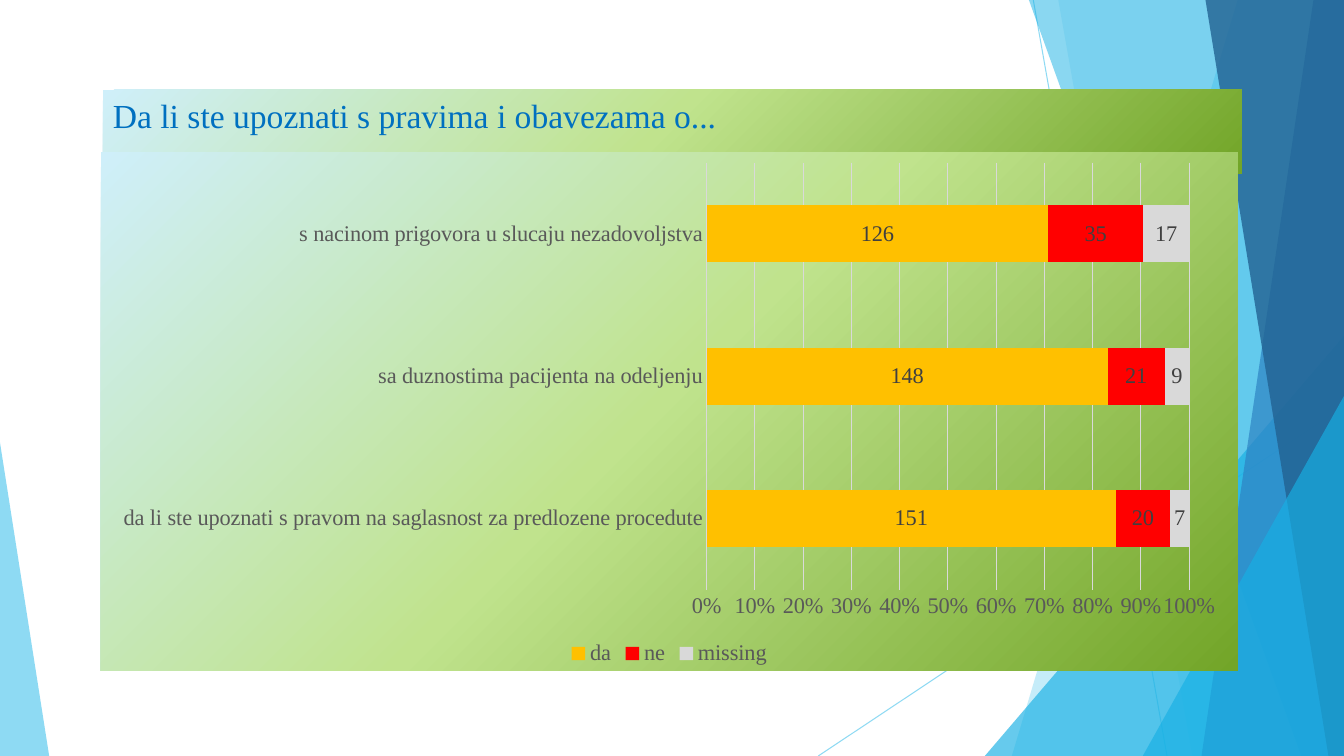
"""Build a slide with a stacked bar chart on how well patients know their rights and duties."""
from lxml import etree
from pptx import Presentation
from pptx.chart.data import CategoryChartData
from pptx.dml.color import RGBColor
from pptx.enum.chart import XL_CHART_TYPE, XL_LEGEND_POSITION, XL_TICK_MARK
from pptx.enum.shapes import MSO_CONNECTOR, MSO_SHAPE
from pptx.enum.text import MSO_ANCHOR, MSO_AUTO_SIZE, PP_ALIGN
from pptx.oxml import parse_xml
from pptx.oxml.ns import nsdecls, qn
from pptx.util import Cm, Pt

STRAIGHT = MSO_CONNECTOR.STRAIGHT
TRIANGLE = MSO_SHAPE.ISOSCELES_TRIANGLE
BAR_STACKED_100 = XL_CHART_TYPE.BAR_STACKED_100
LEGEND_BOTTOM = XL_LEGEND_POSITION.BOTTOM
NO_TICKS = XL_TICK_MARK.NONE
ANCHOR_TOP = MSO_ANCHOR.TOP
NO_AUTOFIT = MSO_AUTO_SIZE.NONE
LEFT = PP_ALIGN.LEFT

SKY = RGBColor(0x5F, 0xCB, 0xEF)
CYAN = RGBColor(0x17, 0xB0, 0xE4)
BLUE = RGBColor(0x2E, 0x83, 0xC3)
NAVY = RGBColor(0x22, 0x62, 0x92)
TITLE_BLUE = RGBColor(0x00, 0x70, 0xC0)
DARK_GREEN = RGBColor(0x72, 0xA5, 0x28)
LIGHT_GREEN = RGBColor(0xC0, 0xE3, 0x8D)
PALE_BLUE = RGBColor(0xCF, 0xEF, 0xFA)
AMBER = RGBColor(0xFF, 0xC0, 0x00)
RED = RGBColor(0xFF, 0x00, 0x00)
LIGHT_GRAY = RGBColor(0xD9, 0xD9, 0xD9)
AXIS_GRAY = RGBColor(0x59, 0x59, 0x59)
LABEL_GRAY = RGBColor(0x40, 0x40, 0x40)
BLACK = RGBColor(0x00, 0x00, 0x00)
FONT = "Times New Roman"
WIDTH, HEIGHT = 33.87, 19.05


def set_alpha(owner, percent):
    color = next(owner.iter(qn("a:srgbClr")))
    etree.SubElement(color, qn("a:alpha")).set("val", str(percent * 1000))


def style_font(font, size, color):
    font.name = FONT
    font.size = Pt(size)
    font.color.rgb = color


prs = Presentation()
prs.slide_width, prs.slide_height = Cm(WIDTH), Cm(HEIGHT)
slide = prs.slides.add_slide(prs.slide_layouts[5])
shapes = slide.shapes

for x1, y1, x2, y2 in [(26.04, 0, 29.41, HEIGHT), (WIDTH, 10.24, 20.62, HEIGHT)]:
    ray = shapes.add_connector(STRAIGHT, Cm(x1), Cm(y1), Cm(x2), Cm(y2))
    ray.line.color.rgb = SKY
    ray.line.width = Pt(0.75)
    properties = ray._element.spPr
    set_alpha(properties, 70)
    etree.SubElement(properties, qn("a:effectLst"))

# Slabs give top and bottom x of their left edge; triangles give box and apex.
facets = [
    ((31.19, 25.5), SKY, 36),
    ((26.67, 30.05), SKY, 20),
    ((24.82, 8.46, 9.05, 10.59, 1), CYAN, 66),
    ((25.93, 32.79), CYAN, 50),
    ((33.1, 30.28), BLUE, 70),
    ((30.38, 33.48), NAVY, 80),
    ((28.8, 9.98, 5.07, 9.07, 1), CYAN, 66),
    ((0, 11.15, 1.24, 7.9, 0), SKY, 70),
]
for outline, color, alpha in facets:
    if len(outline) == 2:
        top_x, bottom_x = outline
        builder = shapes.build_freeform(Cm(top_x), 0)
        corners = [(WIDTH, 0), (WIDTH, HEIGHT), (bottom_x, HEIGHT)]
        builder.add_line_segments([(Cm(x), Cm(y)) for x, y in corners])
        facet = builder.convert_to_shape()
    else:
        *box, apex = outline
        facet = shapes.add_shape(TRIANGLE, *map(Cm, box))
        facet.adjustments[0] = apex
    facet.shadow.inherit = False
    facet.fill.solid()
    facet.fill.fore_color.rgb = color
    set_alpha(facet._element.spPr, alpha)
    facet.line.fill.background()

title = shapes.title
shapes._spTree.append(title._element)
title.left, title.top, title.width, title.height = Cm(2.59), Cm(2.26), Cm(28.7), Cm(2.11)
title.text_frame.text = "Da li ste upoznati s pravima i obavezama o..."
title.text_frame.vertical_anchor = ANCHOR_TOP
title.text_frame.auto_size = NO_AUTOFIT
heading = title.text_frame.paragraphs[0]
heading.alignment = LEFT
style_font(heading.runs[0].font, 24, TITLE_BLUE)

answers = CategoryChartData()
answers.categories = [
    "da li ste upoznati s pravom na saglasnost za predlozene procedute",
    "sa duznostima pacijenta na odeljenju",
    "s nacinom prigovora u slucaju nezadovoljstva",
]
answers.add_series("da", (151, 148, 126))
answers.add_series("ne", (20, 21, 35))
answers.add_series("missing", (7, 9, 17))
chart = shapes.add_chart(
    BAR_STACKED_100, Cm(2.54), Cm(3.84), Cm(28.65), Cm(13.06), answers
).chart
chart.has_title = False
style_font(chart.font, 16, BLACK)
chart.has_legend = True
chart.legend.position = LEGEND_BOTTOM
chart.legend.include_in_layout = False
style_font(chart.legend.font, 16, AXIS_GRAY)

plot = chart.plots[0]
plot.gap_width = 150
plot.overlap = 100
for series, color in zip(plot.series, (AMBER, RED, LIGHT_GRAY)):
    series.format.fill.solid()
    series.format.fill.fore_color.rgb = color
    series.data_labels.show_value = True
    style_font(series.data_labels.font, 16, LABEL_GRAY)

questions, shares = chart.category_axis, chart.value_axis
for axis in (questions, shares):
    axis.major_tick_mark = axis.minor_tick_mark = NO_TICKS
    style_font(axis.tick_labels.font, 16, AXIS_GRAY)
shares.tick_labels.number_format = "0%"
shares.tick_labels.number_format_is_linked = False
shares.format.line.fill.background()
shares.has_major_gridlines = True
for line in (questions.format.line, shares.major_gridlines.format.line):
    line.color.rgb = LIGHT_GRAY
    line.width = Pt(0.75)

chart_space = chart._chartSpace
chart_properties = parse_xml(f'<c:spPr {nsdecls("c", "a")}><a:ln><a:noFill/></a:ln></c:spPr>')
chart_space.find(qn("c:chart")).addnext(chart_properties)
stops = "".join(
    f'<a:gs pos="{position * 1000}"><a:srgbClr val="{color}"/></a:gs>'
    for position, color in [(0, DARK_GREEN), (51, LIGHT_GREEN), (100, PALE_BLUE)]
)
gradient = (
    f'<a:gradFill {nsdecls("a")} rotWithShape="1"><a:gsLst>{stops}</a:gsLst>'
    '<a:path path="circle"><a:fillToRect l="100000" t="100000"/></a:path>'
    '<a:tileRect r="-100000" b="-100000"/></a:gradFill>'
)
title._element.spPr.append(parse_xml(gradient))
chart_properties.insert(0, parse_xml(gradient))

prs.save("out.pptx")
